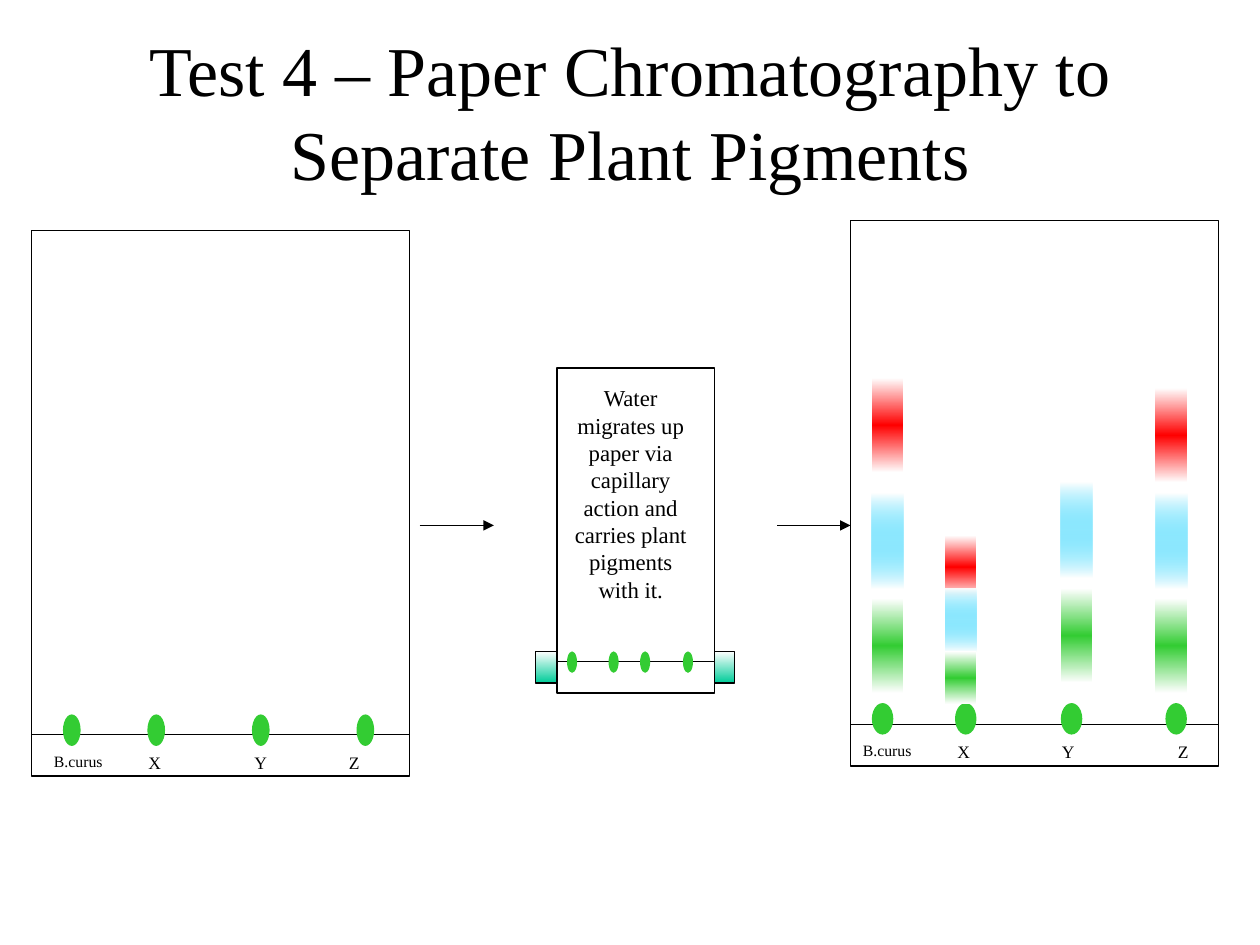
from lxml import etree
from pptx import Presentation
from pptx.dml.color import RGBColor
from pptx.enum.shapes import MSO_CONNECTOR as LINE, MSO_SHAPE as SHAPE
from pptx.enum.text import MSO_ANCHOR as ANCHOR, MSO_AUTO_SIZE as AUTO, PP_ALIGN as ALIGN
from pptx.oxml import parse_xml
from pptx.oxml.ns import nsdecls, qn
from pptx.util import Inches, Pt

BLACK = RGBColor(0x00, 0x00, 0x00)
WHITE = RGBColor(0xFF, 0xFF, 0xFF)
GREEN = RGBColor(0x33, 0xCC, 0x33)
RED = RGBColor(0xFF, 0x00, 0x00)
CYAN = RGBColor(0x00, 0xCC, 0xFF)
TEAL = RGBColor(0x00, 0xCC, 0x99)
FONT = "Times New Roman"

prs = Presentation()
prs.slide_width, prs.slide_height = Inches(10), Inches(7.5)
slide = prs.slides.add_slide(prs.slide_layouts[5])
shapes = slide.shapes


def add_shape(kind, box, fill, edge=False):
    """Add a shape; a list of colours as fill makes a vertical gradient."""
    shape = shapes.add_shape(kind, *map(Inches, box))
    shape.shadow.inherit = False
    if edge:
        shape.line.color.rgb = BLACK
        shape.line.width = Pt(0.75)
    else:
        shape.line.fill.background()
    if isinstance(fill, list):
        stops = ""
        for i, color in enumerate(fill):
            alpha = '<a:alpha val="44000"/>' if color == CYAN else ""
            pos = 100000 * i // (len(fill) - 1)
            stops += f'<a:gs pos="{pos}"><a:srgbClr val="{color}">{alpha}</a:srgbClr></a:gs>'
        grad = parse_xml(
            f'<a:gradFill {nsdecls("a")} rotWithShape="1"><a:gsLst>{stops}</a:gsLst>'
            '<a:lin ang="5400000" scaled="1"/></a:gradFill>')
        shape._element.spPr.find(qn("a:prstGeom")).addnext(grad)
    else:
        shape.fill.solid()
        shape.fill.fore_color.rgb = fill


def add_line(left, right, y, arrow=False):
    line = shapes.add_connector(LINE.STRAIGHT, *map(Inches, (left, y, right, y)))
    line.line.color.rgb = BLACK
    line.line.width = Pt(0.75)
    if arrow:
        etree.SubElement(line.line._get_or_add_ln(), qn("a:tailEnd"), type="triangle")
    etree.SubElement(line._element.spPr, qn("a:effectLst"))


# Title
title = shapes.title
title.left, title.top = Inches(0.75), Inches(0.25)
title.width, title.height = Inches(8.5), Inches(1.25)
frame = title.text_frame
frame.auto_size = AUTO.NONE
frame.word_wrap = True
frame.vertical_anchor = ANCHOR.MIDDLE
para = frame.paragraphs[0]
para.alignment = ALIGN.CENTER
run = para.add_run()
run.text = "Test 4 – Paper Chromatography to Separate Plant Pigments"
run.font.name, run.font.size = FONT, Pt(40)
run.font.color.rgb = BLACK

# Water tray behind the middle paper
add_shape(SHAPE.RECTANGLE, (4.25, 5.17, 1.58, 0.25), [WHITE, TEAL], True)

# Papers: outline, start line, spot lefts, spot top and size
papers = [
    ((4.42, 2.92, 1.25, 2.58), 5.25, (4.5, 4.83, 5.08, 5.42), (5.17, 0.08, 0.17)),
    ((6.75, 1.75, 2.92, 4.33), 5.75, (6.92, 7.58, 8.42, 9.25), (5.58, 0.17, 0.25)),
    ((0.25, 1.83, 3, 4.33), 5.83, (0.5, 1.17, 2, 2.83), (5.67, 0.14, 0.25)),
]
for box, base, spots, (top, wide, high) in papers:
    add_shape(SHAPE.RECTANGLE, box, WHITE, True)
    add_line(box[0], box[0] + box[2], base)
    for x in spots:
        add_shape(SHAPE.OVAL, (x, top, wide, high), GREEN)

# Pigment bands: left, then colour, top and height of each
bands = [
    (6.92, [(RED, 3, 0.75), (CYAN, 3.92, 0.75), (GREEN, 4.75, 0.75)]),
    (9.17, [(RED, 3.08, 0.75), (CYAN, 3.92, 0.75), (GREEN, 4.75, 0.75)]),
    (8.42, [(CYAN, 3.83, 0.75), (GREEN, 4.67, 0.75)]),
    (7.5, [(RED, 4.25, 0.5), (CYAN, 4.67, 0.5), (GREEN, 5.17, 0.42)]),
]
for x, column in bands:
    for color, top, high in column:
        add_shape(SHAPE.RECTANGLE, (x, top, 0.25, high), [WHITE, color, WHITE])

# Arrows between the papers
for left, right in ((3.33, 3.92), (6.17, 6.75)):
    add_line(left, right, 4.17, True)

# Sample labels and the note on the middle paper
note = ("Water migrates up paper via capillary action and carries "
        "plant pigments with it.")
labels = [(note, 13, ALIGN.CENTER, (4.42, 3, 1.17, 2.07))]
for top, lefts in ((5.92, (0.33, 1.08, 1.92, 2.67)), (5.83, (6.75, 7.5, 8.33, 9.25))):
    for name, size, x, wide in zip(("B.curus", "X", "Y", "Z"), (9, 10, 10, 10),
                                   lefts, (0.92, 0.75, 0.58, 0.58)):
        labels.append((name, size, ALIGN.LEFT, (x, top, wide, 0.26)))
for text, size, align, box in labels:
    frame = shapes.add_textbox(*map(Inches, box)).text_frame
    frame.word_wrap = True
    frame.auto_size = AUTO.SHAPE_TO_FIT_TEXT
    para = frame.paragraphs[0]
    para.alignment = align
    run = para.add_run()
    run.text = text
    run.font.name, run.font.size = FONT, Pt(size)
    run.font.color.rgb = BLACK

prs.save("out.pptx")
